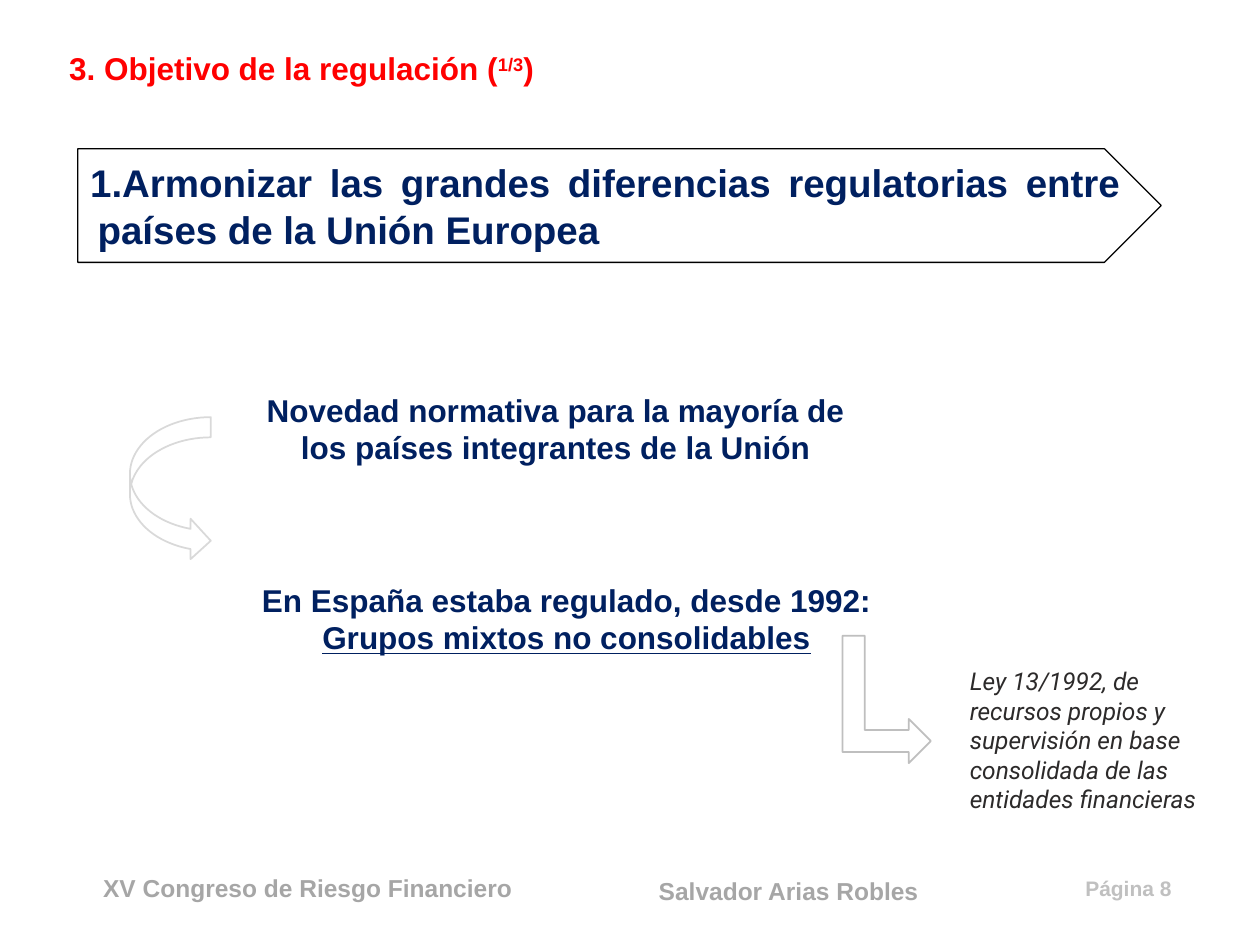
from lxml.etree import SubElement
from pptx import Presentation
from pptx.dml.color import RGBColor
from pptx.enum.shapes import MSO_SHAPE as Shape
from pptx.enum.text import MSO_ANCHOR as Anchor, MSO_AUTO_SIZE as AutoSize, PP_ALIGN as Align
from pptx.oxml.ns import qn
from pptx.util import Cm, Pt

COLORS = {
    "title": "FF0000", "navy": "002060", "law": "2C2A2A", "footer": "A6A6A6",
    "page": "C0C0C0", "black": "000000", "curve": "D9D9D9", "bend": "BFBFBF",
}

# Run: (text, extra formatting)
TITLE = [("3. Objetivo de la regulación (", None), ("1/3", "superscript"), (")", None)]
TITLE_FRAME = (1.14, 0.86, 10.06, 1.02)

GOAL = "Armonizar las grandes diferencias regulatorias entre países de la Unión Europea"

# Frame (left, top, width, height in cm), paragraphs of runs, style
TEXTS = [
    ((4.85, 7.75, 12.7, 1.8),
     [[("Novedad normativa para la mayoría de los países integrantes de la Unión", None)]],
     dict(size=18, color="navy", align=Align.CENTER)),
    ((3.71, 11.58, 14.15, 1.8),
     [[("En España estaba regulado, desde 1992:", None)],
      [("Grupos mixtos no consolidables", "underline")]],
     dict(size=18, color="navy", align=Align.CENTER, level=1)),
    ((19.3, 13.31, 5.46, 3.25),
     [[("Ley 13/1992, de recursos propios y supervisión en base consolidada "
        "de las entidades financieras", None)]],
     dict(size=14, color="law", font="Roboto", bold=False, italic=True)),
    ((1.83, 17.48, 8.81, 0.86), [[("XV Congreso de Riesgo Financiero", None)]],
     dict(size=14, color="footer")),
    ((13.03, 17.53, 5.74, 0.86), [[("Salvador Arias Robles", None)]],
     dict(size=14, color="footer")),
    ((21.18, 17.53, 2.69, 0.76), [[("Página 8", None)]],
     dict(size=12, color="page", align=Align.RIGHT, wrap=False)),
]

# Preset, frame, line colour, line width, rotation
GOAL_PLATE = (Shape.PENTAGON, (1.57, 3.0, 21.84, 2.29), "black", 0.75, 0)
ARROWS = [
    (Shape.CURVED_RIGHT_ARROW, (2.62, 8.41, 1.63, 2.9), "curve", 1, 0),
    (Shape.BENT_UP_ARROW, (16.59, 13.21, 2.57, 1.78), "bend", 1, 90),
]


def rgb(name):
    return RGBColor.from_string(COLORS[name])


def add_runs(para, runs, size, color, font="Arial", bold=True, italic=False):
    for text, extra in runs:
        span = para.add_run()
        span.text = text
        span.font.name, span.font.size = font, Pt(size)
        span.font.bold, span.font.italic = bold, italic
        span.font.color.rgb = rgb(color)
        if extra == "underline":
            span.font.underline = True
        elif extra == "superscript":
            span.font._element.set("baseline", "30000")


def set_indent(para, left, first=0):
    properties = para._p.get_or_add_pPr()
    properties.set("marL", str(Cm(left)))
    properties.set("indent", str(Cm(first)))
    return properties


def add_text(slide, frame, paragraphs, align=Align.LEFT, level=0, wrap=True, **style):
    box = slide.shapes.add_textbox(*map(Cm, frame)).text_frame
    box.word_wrap = wrap
    for index, runs in enumerate(paragraphs):
        para = box.add_paragraph() if index else box.paragraphs[0]
        para.alignment, para.level = align, level
        set_indent(para, 1.27 * level)
        add_runs(para, runs, **style)


def add_outline(slide, preset, frame, color, width, rotation):
    """Add an unfilled preset shape."""
    shape = slide.shapes.add_shape(preset, *map(Cm, frame))
    shape.shadow.inherit = False
    shape.fill.background()
    shape.line.color.rgb = rgb(color)
    shape.line.width = Pt(width)
    shape.rotation = rotation
    return shape


def add_title(slide):
    title = slide.shapes.title
    title.left, title.top, title.width, title.height = map(Cm, TITLE_FRAME)
    box = title.text_frame
    box.auto_size, box.word_wrap = AutoSize.NONE, False
    box.vertical_anchor = Anchor.TOP
    box.paragraphs[0].alignment = Align.LEFT
    add_runs(box.paragraphs[0], TITLE, 18, "title")


def add_goal(slide):
    box = add_outline(slide, *GOAL_PLATE).text_frame
    box.word_wrap, box.vertical_anchor = True, Anchor.MIDDLE
    para = box.paragraphs[0]
    para.alignment = Align.JUSTIFY
    properties = set_indent(para, 0.15, -0.97)
    SubElement(properties, qn("a:buFont"), typeface="+mj-lt")
    SubElement(properties, qn("a:buAutoNum"), type="arabicPeriod")
    add_runs(para, [(GOAL, None)], 22, "navy")


def main():
    deck = Presentation()
    deck.slide_width, deck.slide_height = Cm(25.4), Cm(19.05)
    page = deck.slides.add_slide(deck.slide_layouts[5])
    add_title(page)
    add_goal(page)
    for frame, paragraphs, style in TEXTS:
        add_text(page, frame, paragraphs, **style)
    for arrow in ARROWS:
        add_outline(page, *arrow)
    deck.save("out.pptx")


if __name__ == "__main__":
    main()
